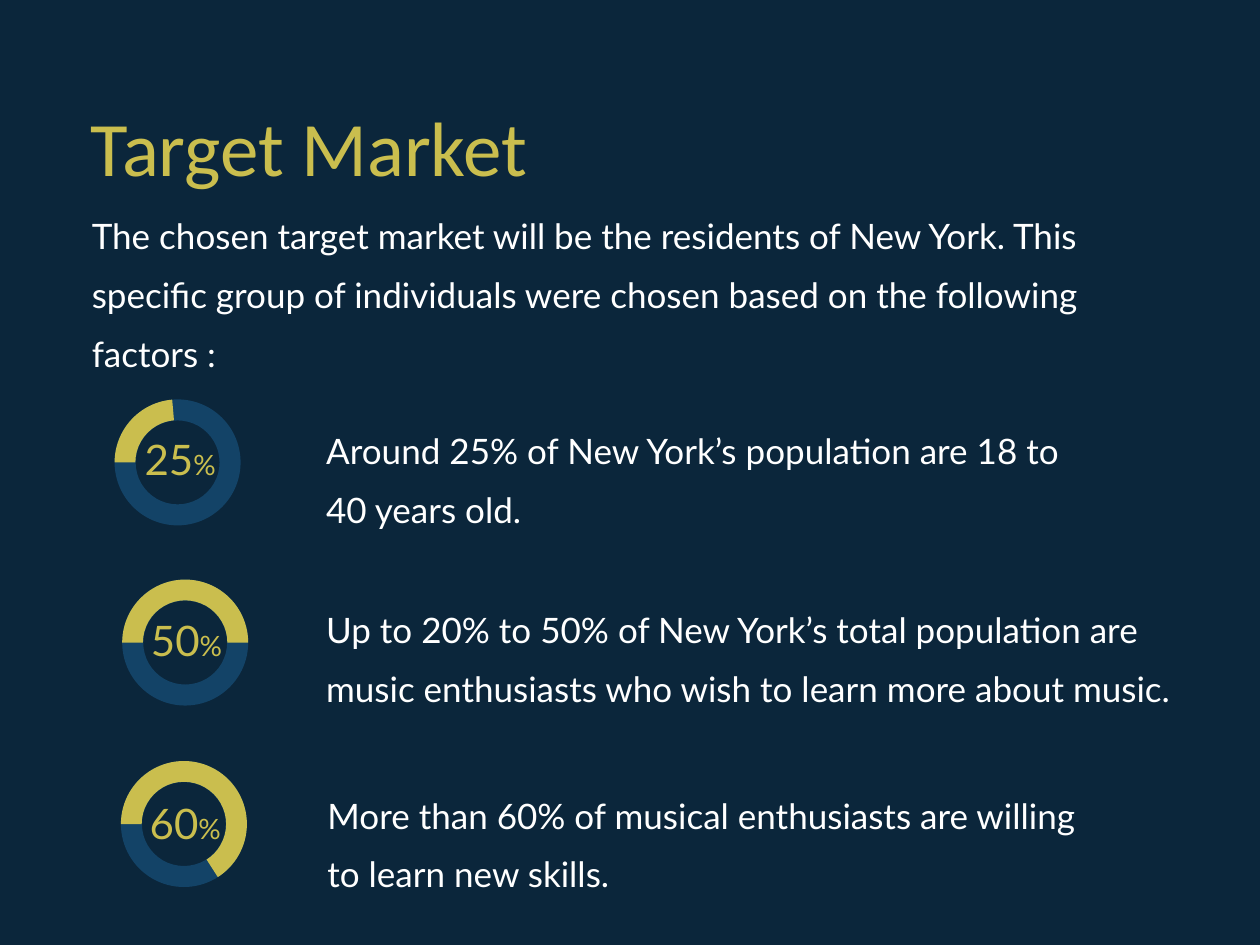
from pptx import Presentation
from pptx.dml.color import RGBColor
from pptx.enum.shapes import MSO_SHAPE as Kind
from pptx.enum.text import PP_ALIGN as Align
from pptx.util import Inches, Pt

NAVY = RGBColor(0x0B, 0x26, 0x3B)
BLUE = RGBColor(0x13, 0x43, 0x67)
GOLD = RGBColor(0xCA, 0xBE, 0x4E)
WHITE = RGBColor(0xFF, 0xFF, 0xFF)

INTRO = ("The chosen target market will be the residents of New York. This "
         "specific group of individuals were chosen based on the following factors :")
FACTS = [
    ("25", (0.91, 3.17), 265.09, (1.01, 3.39), (2.49, 3.23, 6.22),
     "Around 25% of New York’s population are 18 to 40 years old."),
    ("50", (0.97, 4.6), 0, (1.06, 4.83), (2.49, 4.65, 6.99),
     "Up to 20% to 50% of New York’s total population are "
     "music enthusiasts who wish to learn more about music."),
    ("60", (0.96, 6.04), 57.43, (1.05, 6.28), (2.5, 6.12, 6.22),
     "More than 60% of musical enthusiasts are willing to learn new skills."),
]


def add_text(slide, box, runs, color, face="Lato", space=None, align=None):
    """Add a wrapped one-paragraph text box from (text, size) runs."""
    frame = slide.shapes.add_textbox(*map(Inches, box)).text_frame
    frame.word_wrap = True
    para = frame.paragraphs[0]
    para.font.name = face
    para.font.color.rgb = color
    para.line_spacing = space
    para.alignment = align
    for text, size in runs:
        run = para.add_run()
        run.text = text
        run.font.size = Pt(size)


def add_body(slide, box, text):
    """Add white body text with open line spacing."""
    add_text(slide, box, [(text, 20)], WHITE, space=1.4)


def add_part(group, kind, spot, color, adjust):
    """Add one flat ring part to a group."""
    part = group.shapes.add_shape(kind, *map(Inches, (*spot, 1, 1)))
    part.shadow.inherit = False
    part.fill.solid()
    part.fill.fore_color.rgb = color
    part.line.fill.background()
    for i, value in enumerate(adjust):
        part.adjustments[i] = value


def add_ring(slide, spot, end):
    """Add a ring whose gold arc runs from the left to the end angle."""
    group = slide.shapes.add_group_shape()
    add_part(group, Kind.DONUT, spot, BLUE, [0.167])
    add_part(group, Kind.BLOCK_ARC, spot, GOLD, [180 * 0.6, end * 0.6, 0.165])


def main():
    """Build the target market slide."""
    deck = Presentation()
    deck.slide_width, deck.slide_height = Inches(10), Inches(7.5)
    slide = deck.slides.add_slide(deck.slide_layouts[6])
    slide.background.fill.solid()
    slide.background.fill.fore_color.rgb = NAVY

    add_text(slide, (0.62, 0.74, 4.01, 0.84), [("Target Market", 44)], GOLD, "Calibri")
    add_body(slide, (0.63, 1.52, 8.65, 1.24), INTRO)
    for share, spot, end, label, box, text in FACTS:
        add_ring(slide, spot, end)
        add_text(slide, (*label, 0.84, 0.5), [(share, 24), ("%", 16)], GOLD,
                 align=Align.CENTER)
        add_body(slide, (*box, 0.85), text)

    deck.save("out.pptx")


if __name__ == "__main__":
    main()
